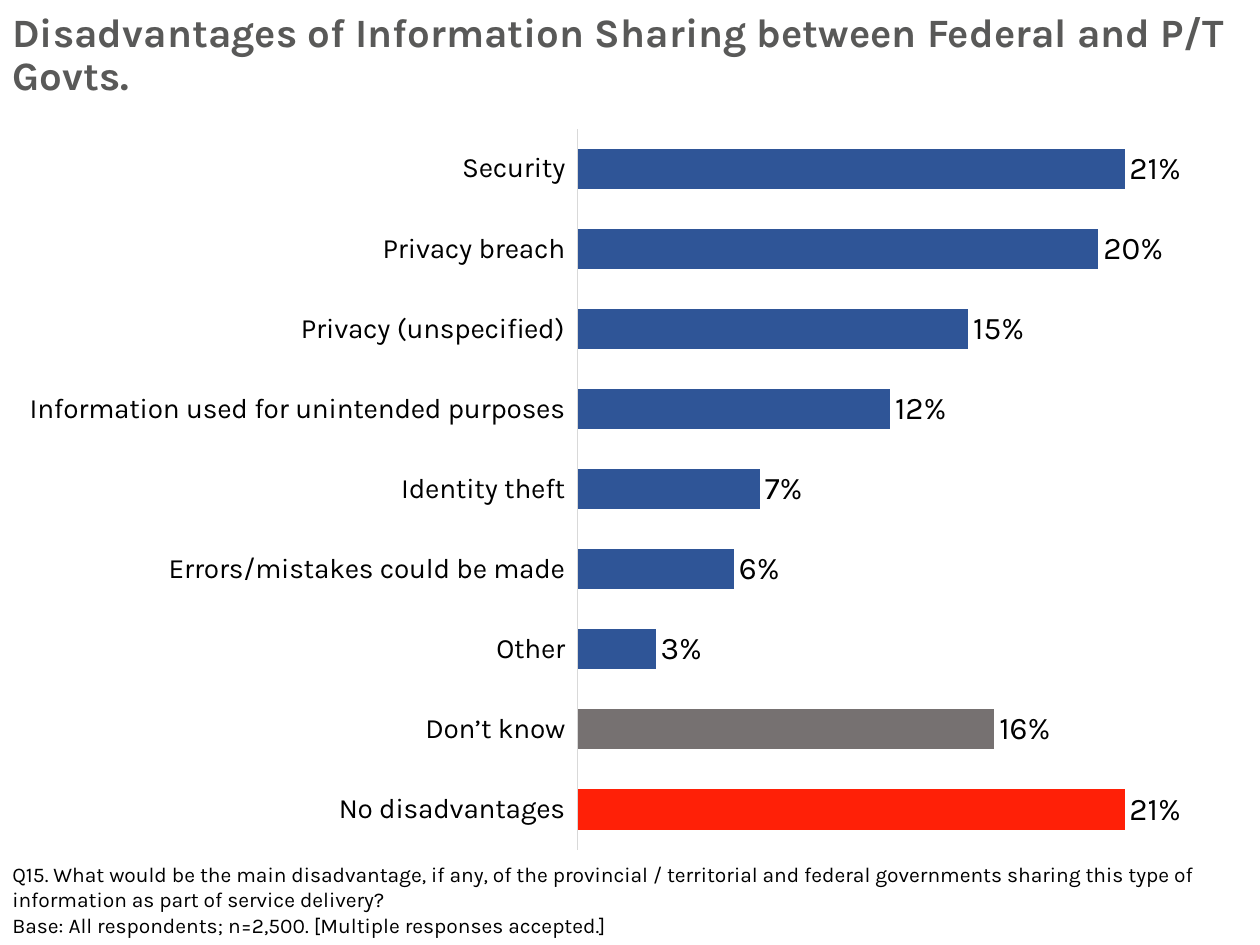
from typing import NamedTuple

from lxml.etree import SubElement
from pptx import Presentation
from pptx.chart.data import CategoryChartData
from pptx.dml.color import RGBColor
from pptx.enum.chart import XL_CHART_TYPE as ChartType
from pptx.enum.chart import XL_LABEL_POSITION as LabelPosition
from pptx.enum.chart import XL_TICK_LABEL_POSITION as TickLabelPosition
from pptx.enum.chart import XL_TICK_MARK as TickMark
from pptx.oxml.ns import qn
from pptx.util import Inches, Pt

BLACK = RGBColor(0x00, 0x00, 0x00)
TITLE_GRAY = RGBColor(0x59, 0x59, 0x58)
AXIS_GRAY = RGBColor(0xD9, 0xD9, 0xD9)
BLUE = RGBColor(0x2F, 0x55, 0x97)
GRAY = RGBColor(0x76, 0x71, 0x71)
RED = RGBColor(0xFF, 0x20, 0x07)
FONT = "Karla"


class Response(NamedTuple):
    label: str
    share: float
    color: RGBColor = BLUE


RESPONSES = [
    Response("Security", 0.21),
    Response("Privacy breach", 0.20),
    Response("Privacy (unspecified)", 0.15),
    Response("Information used for unintended purposes", 0.12),
    Response("Identity theft", 0.07),
    Response("Errors/mistakes could be made", 0.06),
    Response("Other", 0.03),
    Response("Don’t know", 0.16, GRAY),
    Response("No disadvantages", 0.21, RED),
]


def format_font(font, size: float, color: RGBColor = BLACK, bold: bool = False,
                name: str = FONT) -> None:
    font.name = name
    font.size = Pt(size)
    font.bold = bold
    font.color.rgb = color


def add_text(slide, paragraphs: list[str], *, top: float, height: float, size: float,
             color: RGBColor = BLACK, bold: bool = False, line_spacing: float = 1.0) -> None:
    """Add a full-width text box with one paragraph per string."""
    box = slide.shapes.add_textbox(Inches(0), Inches(top), Inches(10), Inches(height))
    frame = box.text_frame
    frame.word_wrap = True
    for index, text in enumerate(paragraphs):
        paragraph = frame.paragraphs[0] if index == 0 else frame.add_paragraph()
        paragraph.line_spacing = line_spacing
        run = paragraph.add_run()
        run.text = text
        format_font(run.font, size, color, bold)


def set_plot_layout(chart, x: float, y: float, w: float, h: float) -> None:
    """Fix the inner plot area, as fractions of the chart frame."""
    plot_area = chart.plots[0]._element.getparent()
    layout = plot_area.find(qn("c:layout"))
    if layout is None:
        layout = SubElement(plot_area, qn("c:layout"))
        plot_area.insert(0, layout)
    manual = SubElement(layout, qn("c:manualLayout"))
    settings = {"layoutTarget": "inner", "xMode": "edge", "yMode": "edge",
                "x": x, "y": y, "w": w, "h": h}
    for tag, value in settings.items():
        SubElement(manual, qn(f"c:{tag}")).set("val", str(value))


def add_response_chart(slide, responses: list[Response]) -> None:
    bottom_up = responses[::-1]
    chart_data = CategoryChartData(number_format="0%")
    chart_data.categories = [response.label for response in bottom_up]
    chart_data.add_series("Series 1", [response.share for response in bottom_up])
    chart = slide.shapes.add_chart(
        ChartType.BAR_CLUSTERED, Inches(0.11), Inches(1.01), Inches(9.77), Inches(5.74),
        chart_data).chart
    chart.has_legend = False
    chart.has_title = False
    format_font(chart.font, 18, name="Arial")
    set_plot_layout(chart, 0.458, 0.002, 0.529, 0.997)

    category_axis = chart.category_axis
    category_axis.major_tick_mark = TickMark.NONE
    category_axis.minor_tick_mark = TickMark.NONE
    category_axis.tick_label_position = TickLabelPosition.LOW
    category_axis.format.line.color.rgb = AXIS_GRAY
    category_axis.format.line.width = Pt(0.75)
    format_font(category_axis.tick_labels.font, 16)

    value_axis = chart.value_axis
    value_axis.minimum_scale = 0
    value_axis.maximum_scale = 0.25
    value_axis.has_major_gridlines = False
    value_axis.tick_labels.number_format = "0.00%"
    value_axis.tick_labels.number_format_is_linked = False
    value_axis.visible = False

    plot = chart.plots[0]
    plot.gap_width = 100
    plot.vary_by_categories = False
    series = plot.series[0]
    series.invert_if_negative = False
    series.format.fill.solid()
    series.format.fill.fore_color.rgb = BLUE
    for index, response in enumerate(bottom_up):
        if response.color != BLUE:
            fill = series.points[index].format.fill
            fill.solid()
            fill.fore_color.rgb = response.color

    labels = series.data_labels
    labels.show_value = True
    labels.position = LabelPosition.OUTSIDE_END
    labels.number_format = "0%"
    labels.number_format_is_linked = False
    format_font(labels.font, 18)


def main() -> None:
    presentation = Presentation()
    presentation.slide_width = Inches(10)
    presentation.slide_height = Inches(7.5)
    slide = presentation.slides.add_slide(presentation.slide_layouts[6])

    add_response_chart(slide, RESPONSES)
    add_text(slide, ["Disadvantages of Information Sharing between Federal and P/T Govts."],
             top=0.05, height=0.55, size=23, color=TITLE_GRAY, bold=True, line_spacing=0.9)
    add_text(slide, [
        "Q15. What would be the main disadvantage, if any, of the provincial / territorial and "
        "federal governments sharing this type of information as part of service delivery?",
        "Base: All respondents; n=2,500. [Multiple responses accepted.]",
    ], top=6.79, height=0.71, size=12)
    presentation.save("out.pptx")


if __name__ == "__main__":
    main()
